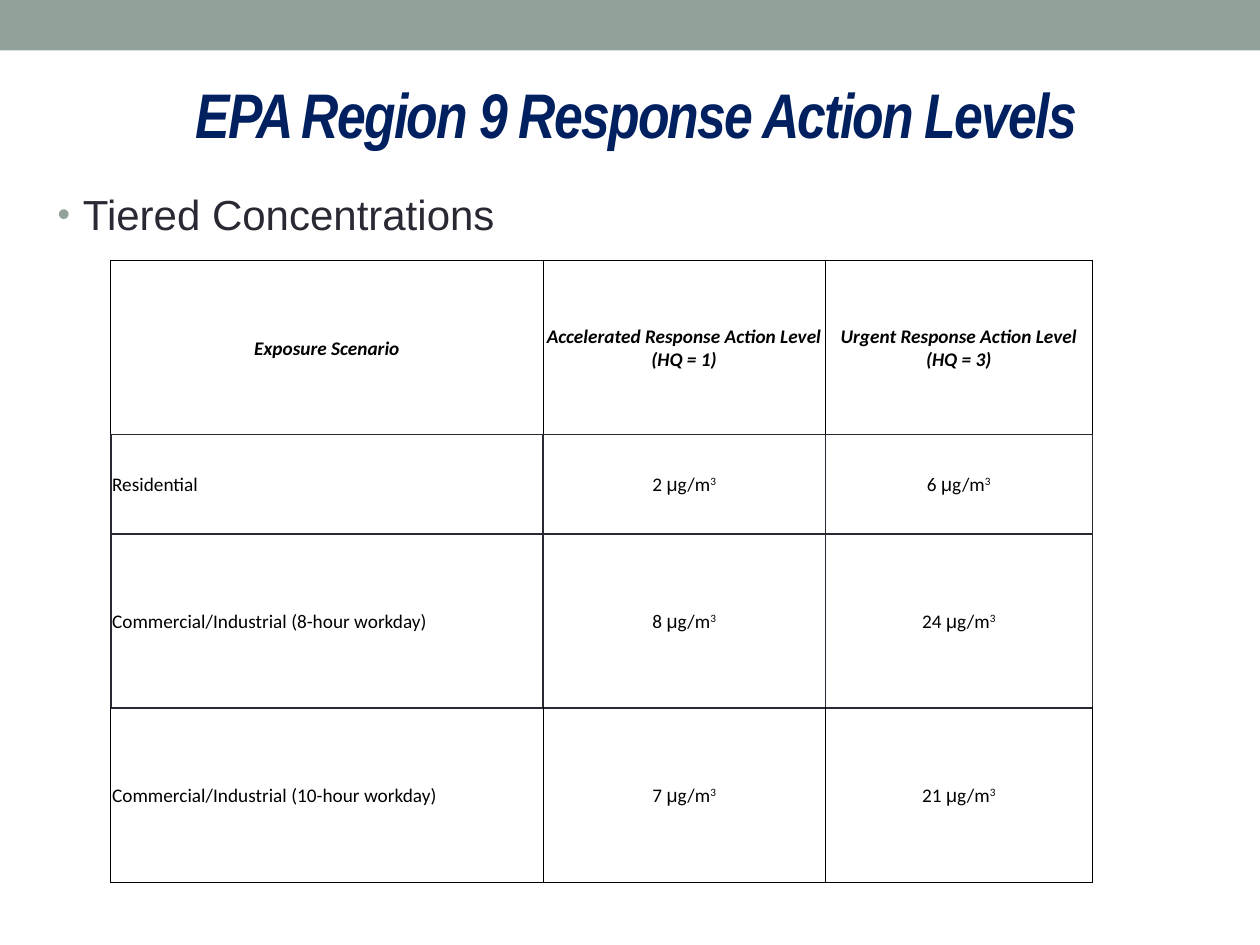
"""Build the slide of EPA Region 9 response action levels."""
from lxml import etree
from pptx import Presentation
from pptx.dml.color import RGBColor
from pptx.enum.shapes import MSO_SHAPE
from pptx.enum.text import MSO_ANCHOR, MSO_AUTO_SIZE, PP_ALIGN
from pptx.oxml.ns import qn
from pptx.util import Inches, Pt

MIDDLE, TOP = MSO_ANCHOR.MIDDLE, MSO_ANCHOR.TOP
LEFT, CENTER = PP_ALIGN.LEFT, PP_ALIGN.CENTER
RECT, FIXED = MSO_SHAPE.RECTANGLE, MSO_AUTO_SIZE.NONE
COLORS = {"sage": "93A299", "navy": "002060", "ink": "292934", "black": "000000"}


def add_text(para, text, size=11, font="Calibri", color="black",
             bold=False, italic=False, align=CENTER, **attrs):
    para.alignment = align
    run = para.add_run()
    run.text = text
    run.font.size = Pt(size)
    run.font.name = font
    run.font.bold = bold
    run.font.italic = italic
    run.font.color.rgb = RGBColor.from_string(COLORS[color])
    for name, value in attrs.items():
        run.font._element.set(name, str(value))


def add_edge(cell, side, color, width):
    line = etree.SubElement(cell._tc.get_or_add_tcPr(), qn(f"a:ln{side}"), w=str(Pt(width)))
    fill = etree.SubElement(line, qn("a:solidFill"))
    etree.SubElement(fill, qn("a:srgbClr"), val=COLORS[color])


prs = Presentation()
prs.slide_width, prs.slide_height = Inches(10), Inches(7.5)
slide = prs.slides.add_slide(prs.slide_layouts[5])

band = slide.shapes.add_shape(RECT, 0, 0, Inches(10), Inches(0.4))
band.shadow.inherit = False
band.fill.solid()
band.fill.fore_color.rgb = RGBColor.from_string(COLORS["sage"])
band.line.fill.background()

title = slide.shapes.title
title.left, title.top = Inches(0.55), Inches(0.36)
title.width, title.height = Inches(9), Inches(1.08)
title.text_frame.auto_size = FIXED
title.text_frame.vertical_anchor = MIDDLE
add_text(title.text_frame.paragraphs[0], "EPA Region 9 Response Action Levels",
         size=36, font="Arial Narrow", color="navy", bold=True, italic=True, spc=-100)

body = slide.shapes.add_textbox(Inches(0.36), Inches(1.45), Inches(9.39), Inches(0.6))
body.text_frame.word_wrap = True
body.text_frame.vertical_anchor = TOP
point = body.text_frame.paragraphs[0]
add_text(point, "Tiered Concentrations", size=24, font="Arial", color="ink", align=LEFT)
point.space_before = Pt(4.8)
props = point._p.get_or_add_pPr()
props.set("marL", str(Inches(0.2)))
props.set("indent", str(-Inches(0.2)))
tint = etree.SubElement(props, qn("a:buClr"))
etree.SubElement(tint, qn("a:srgbClr"), val=COLORS["sage"])
etree.SubElement(props, qn("a:buSzPct"), val="85000")
etree.SubElement(props, qn("a:buFont"), typeface="Arial")
etree.SubElement(props, qn("a:buChar"), char="•")

rows = [
    ("Exposure Scenario", "Accelerated Response Action Level (HQ = 1)",
     "Urgent Response Action Level (HQ = 3)"),
    ("Residential", "2", "6"),
    ("Commercial/Industrial (8-hour workday)", "8", "24"),
    ("Commercial/Industrial (10-hour workday)", "7", "21"),
]
widths, heights = [3.43, 2.24, 2.12], [1.38, 0.79, 1.38, 1.38]
last = len(rows) - 1
frame = slide.shapes.add_table(len(rows), len(widths), Inches(0.88), Inches(2.07),
                               Inches(sum(widths)), Inches(sum(heights)))
table = frame.table
table.first_row = table.horz_banding = False
for col, width in zip(table.columns, widths):
    col.width = Inches(width)
for row, height in zip(table.rows, heights):
    row.height = Inches(height)

thin, thick = ("black", 0.5), ("ink", 1)
for r, row in enumerate(rows):
    side = thin if r in (0, last) else thick
    edges = {"L": side, "R": side, "T": thin if r == 0 else thick,
             "B": thin if r == last else thick}
    for c, text in enumerate(row):
        cell = table.cell(r, c)
        cell.vertical_anchor = MIDDLE
        cell.margin_left = cell.margin_right = cell.margin_top = Inches(0.01)
        cell.margin_bottom = 0
        for name, edge in edges.items():
            add_edge(cell, name, *edge)
        cell.fill.background()
        para = cell.text_frame.paragraphs[0]
        if r == 0:
            add_text(para, text, bold=True, italic=True)
        elif c == 0:
            add_text(para, text, align=LEFT)
        else:
            add_text(para, text + " ")
            add_text(para, "μ", font="Arial")
            add_text(para, "g/m")
            add_text(para, "3", baseline=30000)

prs.save("out.pptx")
